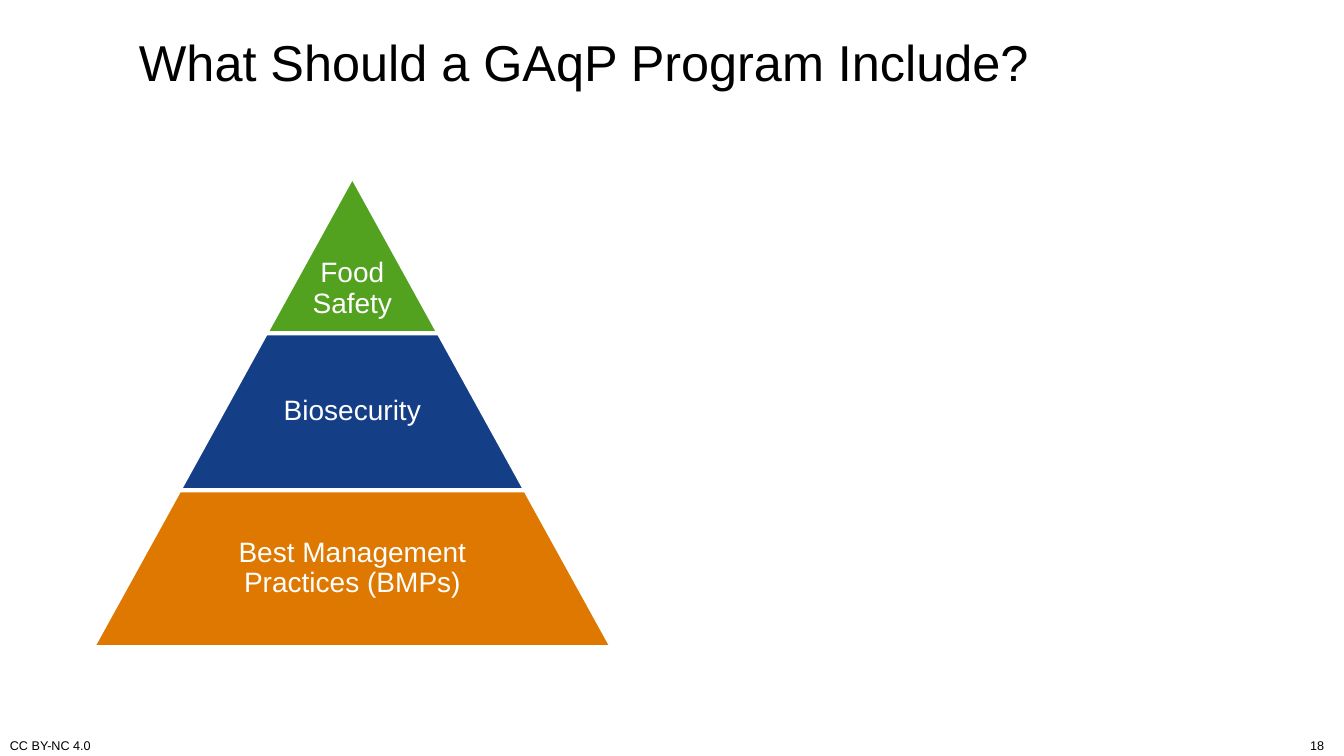
from pptx import Presentation
from pptx.dml.color import RGBColor
from pptx.enum.shapes import MSO_SHAPE
from pptx.enum.text import MSO_ANCHOR, PP_ALIGN
from pptx.util import Inches, Pt

COLORS = {
    "text": "000000",
    "white": "FFFFFF",
    "green": "52A11F",
    "blue": "143E86",
    "orange": "DF7800",
}
FONT = "Arial"

# Tiers from the tip down: label, colour, label width as a share of the tier
TIERS = [
    ("Food\vSafety", "green", 1),
    ("Biosecurity", "blue", 0.65),
    ("Best Management Practices (BMPs)", "orange", 0.65),
]


def color(name):
    return RGBColor.from_string(COLORS[name])


def add_label(slide, box, text, size, ink="text", align=PP_ALIGN.LEFT,
              anchor=MSO_ANCHOR.MIDDLE):
    label = slide.shapes.add_textbox(*(Inches(length) for length in box))
    frame = label.text_frame
    frame.word_wrap = True
    frame.vertical_anchor = anchor
    frame.text = text
    paragraph = frame.paragraphs[0]
    paragraph.alignment = align
    for run in paragraph.runs:
        run.font.name = FONT
        run.font.size = Pt(size)
        run.font.color.rgb = color(ink)
    return frame


def add_pyramid(slide, left, top, width, height):
    tier_height = height / len(TIERS)
    step = width / len(TIERS)
    slant = step / 2 / min(step, tier_height)
    for level, (text, fill, share) in enumerate(TIERS):
        tier_width = step * (level + 1)
        tier_left = left + (width - tier_width) / 2
        tier_top = top + level * tier_height

        # Coloured tier
        tier = slide.shapes.add_shape(
            MSO_SHAPE.TRAPEZOID, Inches(tier_left), Inches(tier_top),
            Inches(tier_width), Inches(tier_height))
        # The adjustment is relative to the shorter side
        tier.adjustments[0] = slant * min(step, tier_height) / min(tier_width, tier_height)
        tier.shadow.inherit = False
        tier.fill.solid()
        tier.fill.fore_color.rgb = color(fill)
        tier.line.color.rgb = color("white")
        tier.line.width = Pt(3)

        # Tier label; the one in the tip sits low, where the tier is wide
        at_tip = level == 0
        label_width = tier_width * share
        frame = add_label(
            slide,
            (left + (width - label_width) / 2, tier_top, label_width, tier_height),
            text, 20, "white", PP_ALIGN.CENTER,
            MSO_ANCHOR.BOTTOM if at_tip else MSO_ANCHOR.MIDDLE)
        frame.margin_left = frame.margin_right = Inches(0.03)
        frame.margin_top = Inches(0.03)
        frame.margin_bottom = Inches(0.14 if at_tip else 0.03)
        frame.paragraphs[0].line_spacing = 0.9


def add_footer(slide, left, top, width, height):
    add_label(slide, (left, top, 2.77, height), "CC BY-NC 4.0", 9,
              anchor=MSO_ANCHOR.BOTTOM)
    add_label(slide, (left + width - 3.11, top, 3.11, height), "18", 9,
              align=PP_ALIGN.RIGHT, anchor=MSO_ANCHOR.BOTTOM)


def main():
    deck = Presentation()
    deck.slide_width = Inches(13.33)
    deck.slide_height = Inches(7.5)
    slide = deck.slides.add_slide(deck.slide_layouts[6])

    add_label(slide, (1.28, 0, 11.5, 1.21),
              "What Should a GAqP Program Include?", 36)
    add_pyramid(slide, 0.92, 1.75, 5.15, 4.67)
    add_footer(slide, 0, 7.3, 13.23, 0.22)

    deck.save("out.pptx")


if __name__ == "__main__":
    main()
